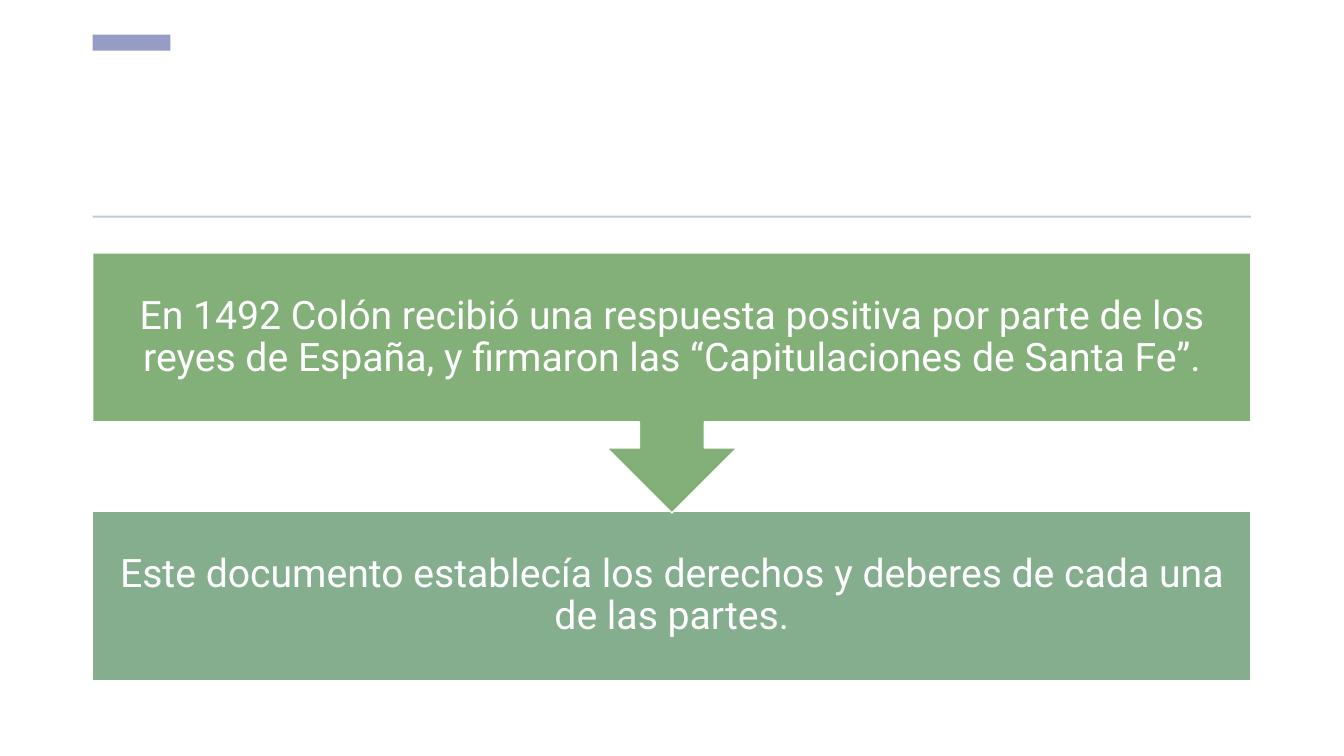
"""Slide with two process steps on the Capitulaciones de Santa Fe."""
from dataclasses import dataclass

import pptx
import pptx.dml.color
import pptx.enum.shapes
import pptx.enum.text
import pptx.util

Pt = pptx.util.Pt
MSO = pptx.enum.shapes.MSO_SHAPE

COLORS = {
    "white": "FFFFFF",
    "accent": "969CC6",
    "rule": "BDCCDB",
    "green": "83B078",
    "teal": "84AE8D",
}
LEFT, WIDTH = 66.24, 827.28


@dataclass
class Block:
    kind: MSO
    top: float
    width: float
    height: float
    color: str
    text: str = ""


BLOCKS = [
    Block(MSO.RECTANGLE, 24.75, 55.5, 11.5, "accent"),
    Block(MSO.RECTANGLE, 154.1, WIDTH, 1.4, "rule"),
    Block(MSO.RECTANGLE, 365.04, WIDTH, 120.96, "teal",
          "Este documento establecía los derechos y deberes de cada una de las partes."),
    Block(MSO.DOWN_ARROW_CALLOUT, 180.72, WIDTH, 185.76, "green",
          "En 1492 Colón recibió una respuesta positiva por parte de los reyes de "
          "España, y firmaron las “Capitulaciones de Santa Fe”."),
]


def rgb(name: str) -> pptx.dml.color.RGBColor:
    return pptx.dml.color.RGBColor.from_string(COLORS[name])


def set_text(sp, text: str, *, size: float = 28, font: str = "Roboto",
             color: str = "white", inset: float = 15.84, spacing: float = 0.9) -> None:
    tf = sp.text_frame
    tf.word_wrap = True
    tf.vertical_anchor = pptx.enum.text.MSO_ANCHOR.MIDDLE
    tf.margin_left = tf.margin_right = tf.margin_top = tf.margin_bottom = Pt(inset)
    p = tf.paragraphs[0]
    p.alignment = pptx.enum.text.PP_ALIGN.CENTER
    p.line_spacing = spacing
    r = p.add_run()
    r.text = text
    r.font.size = Pt(size)
    r.font.name = font
    r.font.color.rgb = rgb(color)


def draw_block(s, block: Block) -> None:
    sp = s.shapes.add_shape(block.kind, Pt(LEFT), Pt(block.top),
                            Pt(block.width), Pt(block.height))
    sp.shadow.inherit = False
    sp.fill.solid()
    sp.fill.fore_color.rgb = rgb(block.color)
    if block.text:
        sp.line.color.rgb = rgb("white")
        sp.line.width = Pt(1)
        set_text(sp, block.text)
    else:
        sp.line.fill.background()


def main() -> None:
    prs = pptx.Presentation()
    prs.slide_width, prs.slide_height = Pt(960), Pt(540)
    s = prs.slides.add_slide(prs.slide_layouts[6])
    for block in BLOCKS:
        draw_block(s, block)
    prs.save("out.pptx")


if __name__ == "__main__":
    main()
